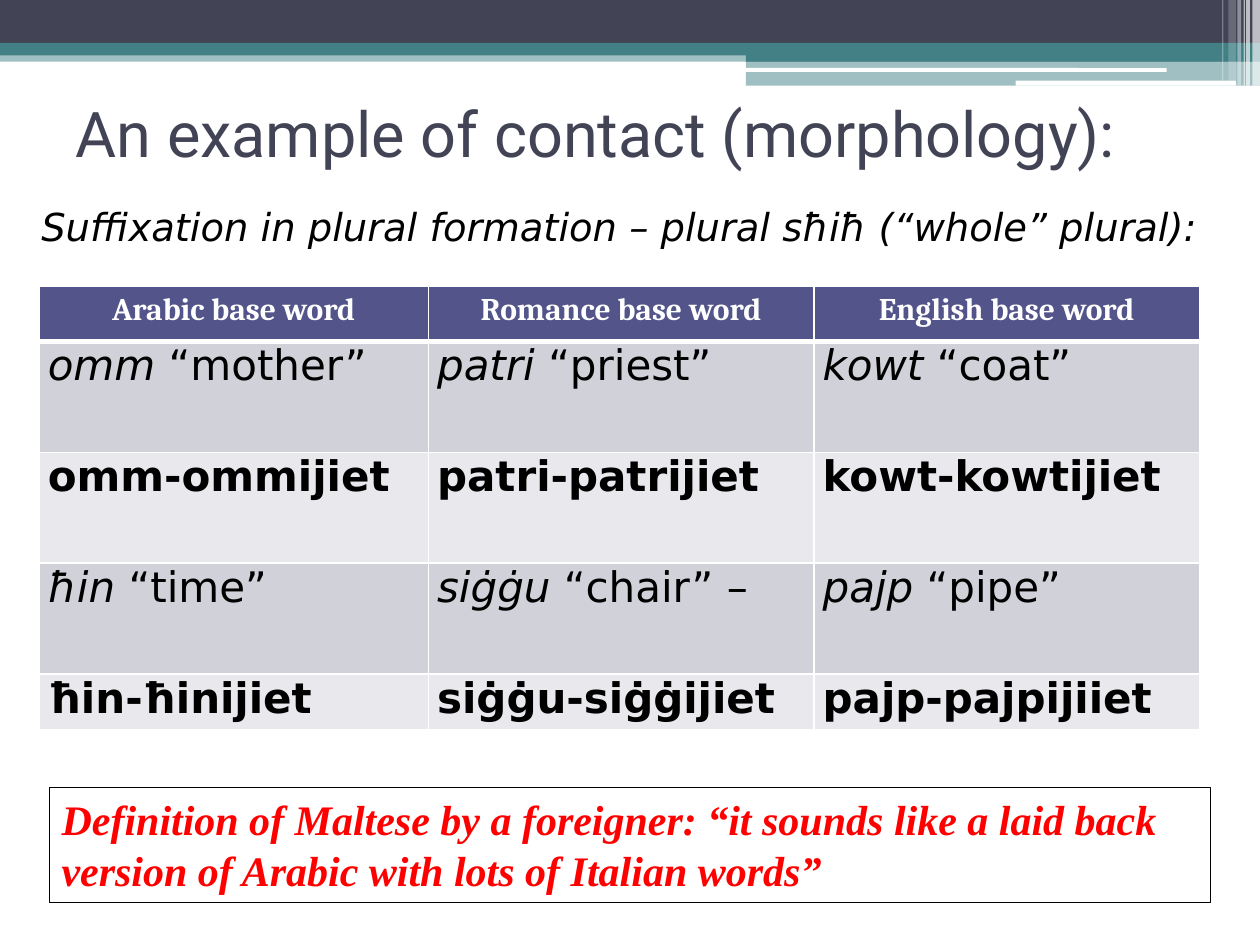
from lxml.etree import SubElement
from pptx import Presentation
from pptx.dml.color import RGBColor
from pptx.enum.shapes import MSO_SHAPE
from pptx.enum.text import MSO_ANCHOR, PP_ALIGN
from pptx.oxml.ns import qn
from pptx.util import Inches, Pt

BANDS = [
    (0, 0.4, 10, 0.09, "438086", 50),
    (0, 0, 10, 0.34, "424456", 100),
    (0, 0.34, 10, 0.1, "438086", 100),
    (5.92, 0.39, 4.08, 0.1, "438086", 100),
    (5.92, 0.48, 4.08, 0.2, "438086", 50),
]
PILLS = [(5.91, 0.54, 3.35, 0.03), (8.06, 0.64, 1.75, 0.04)]
STRIPES = [
    (9.94, 0.06, 0.68, 65),
    (9.89, 0.03, 0.68, 65),
    (9.87, 0.01, 0.68, 60),
    (9.82, 0.03, 0.68, 40),
    (9.75, 0.06, 0.64, 20),
    (9.7, 0.01, 0.64, 30),
]
HEADS = ["Arabic base word", "Romance base word", "English base word"]
ROWS = [
    [("omm", " “mother”"), ("patri", " “priest”"), ("kowt", " “coat”")],
    ["omm-ommijiet", "patri-patrijiet", "kowt-kowtijiet"],
    [("ħin", " “time” "), ("siġġu", " “chair” –"), ("pajp", " “pipe”")],
    ["ħin-ħinijiet", "siġġu-siġġijiet", "pajp-pajpijiiet"],
]
WIDTHS = [3.09, 3.06, 3.06]
HEIGHTS = [0.44, 0.88, 0.88, 0.88, 0.44]
TITLE = {"name": "Roboto", "size": Pt(36), "bold": False}
HEAD = {"name": "Cambria", "size": Pt(18), "bold": True}
BODY = {"name": "DejaVu Sans", "size": Pt(24), "bold": False}
LEAD = {"name": "DejaVu Sans", "size": Pt(22), "italic": True}
QUOTE = {"name": "Times New Roman", "size": Pt(24), "bold": True, "italic": True}


def color(code):
    return RGBColor.from_string(code)


def place(shape, *box):
    for name, size in zip(("left", "top", "width", "height"), box):
        setattr(shape, name, Inches(size))


def add_run(para, text, style, code="000000"):
    run = para.add_run()
    run.text = text
    for name, value in style.items():
        setattr(run.font, name, value)
    run.font.color.rgb = color(code)


def add_bar(slide, box, code, alpha=100, kind=MSO_SHAPE.RECTANGLE):
    bar = slide.shapes.add_shape(kind, *map(Inches, box))
    bar.shadow.inherit = False
    bar.fill.solid()
    bar.fill.fore_color.rgb = color(code)
    bar.line.fill.background()
    if alpha < 100:
        tint = bar.fill._xPr.find(qn("a:solidFill"))[0]
        SubElement(tint, qn("a:alpha"), val=str(alpha * 1000))


def add_bands(slide):
    for *box, code, alpha in BANDS:
        add_bar(slide, box, code, alpha)
    for box in PILLS:
        add_bar(slide, box, "FFFFFF", kind=MSO_SHAPE.ROUNDED_RECTANGLE)
    for left, width, height, alpha in STRIPES:
        add_bar(slide, (left, 0, width, height), "FFFFFF", alpha)


def add_title(slide, text):
    title = slide.shapes.title
    place(title, 0.5, 0.7, 9, 0.7)
    title.text_frame.vertical_anchor = MSO_ANCHOR.MIDDLE
    para = title.text_frame.paragraphs[0]
    para.alignment = PP_ALIGN.LEFT
    add_run(para, text, TITLE, "424456")


def add_text(slide, box, text, style, code):
    shape = slide.shapes.add_textbox(*map(Inches, box))
    shape.text_frame.word_wrap = True
    add_run(shape.text_frame.paragraphs[0], text, style, code)
    return shape


def set_edges(cell, row):
    props = cell._tc.get_or_add_tcPr()
    for side in "LRTB":
        thick = (row, side) in ((0, "B"), (1, "T"))
        edge = SubElement(props, qn("a:ln" + side), w=str(Pt(3 if thick else 1)))
        fill = SubElement(edge, qn("a:solidFill"))
        SubElement(fill, qn("a:srgbClr"), val="FFFFFF")


def fill_cell(cell, row, item):
    set_edges(cell, row)
    shade = "53548A" if row == 0 else "D1D1DA" if row % 2 else "E9E9ED"
    cell.fill.solid()
    cell.fill.fore_color.rgb = color(shade)
    para = cell.text_frame.paragraphs[0]
    if row == 0:
        para.alignment = PP_ALIGN.CENTER
        add_run(para, item, HEAD, "FFFFFF")
        return
    cell.margin_left = cell.margin_right = Inches(0.07)
    cell.margin_top = cell.margin_bottom = 0
    if row % 2:
        word, gloss = item
        add_run(para, word, BODY | {"italic": True})
        add_run(para, gloss, BODY)
    else:
        para.alignment = PP_ALIGN.JUSTIFY
        add_run(para, item, BODY | {"bold": True})


def add_grid(slide):
    rows = [HEADS] + ROWS
    box = (0.31, 2.27, sum(WIDTHS), sum(HEIGHTS))
    grid = slide.shapes.add_table(len(rows), len(HEADS), *map(Inches, box)).table
    for col, width in zip(grid.columns, WIDTHS):
        col.width = Inches(width)
    for line, height in zip(grid.rows, HEIGHTS):
        line.height = Inches(height)
    for row, items in enumerate(rows):
        for col, item in enumerate(items):
            fill_cell(grid.cell(row, col), row, item)


def main():
    deck = Presentation()
    deck.slide_width, deck.slide_height = Inches(10), Inches(7.5)
    slide = deck.slides.add_slide(deck.slide_layouts[5])
    add_bands(slide)
    add_title(slide, "An example of contact (morphology):")
    add_grid(slide)
    lead = "Suffixation in plural formation – plural sħiħ (“whole” plural):"
    add_text(slide, (0.23, 1.56, 9.61, 0.47), lead, LEAD, "000000")
    quote = (
        "Definition of Maltese by a foreigner: “it sounds like a laid back "
        "version of Arabic with lots of Italian words”"
    )
    note = add_text(slide, (0.39, 6.25, 9.22, 0.91), quote, QUOTE, "FF0000")
    note.line.color.rgb = color("000000")
    note.line.width = Pt(0.5)
    deck.save("out.pptx")


if __name__ == "__main__":
    main()
